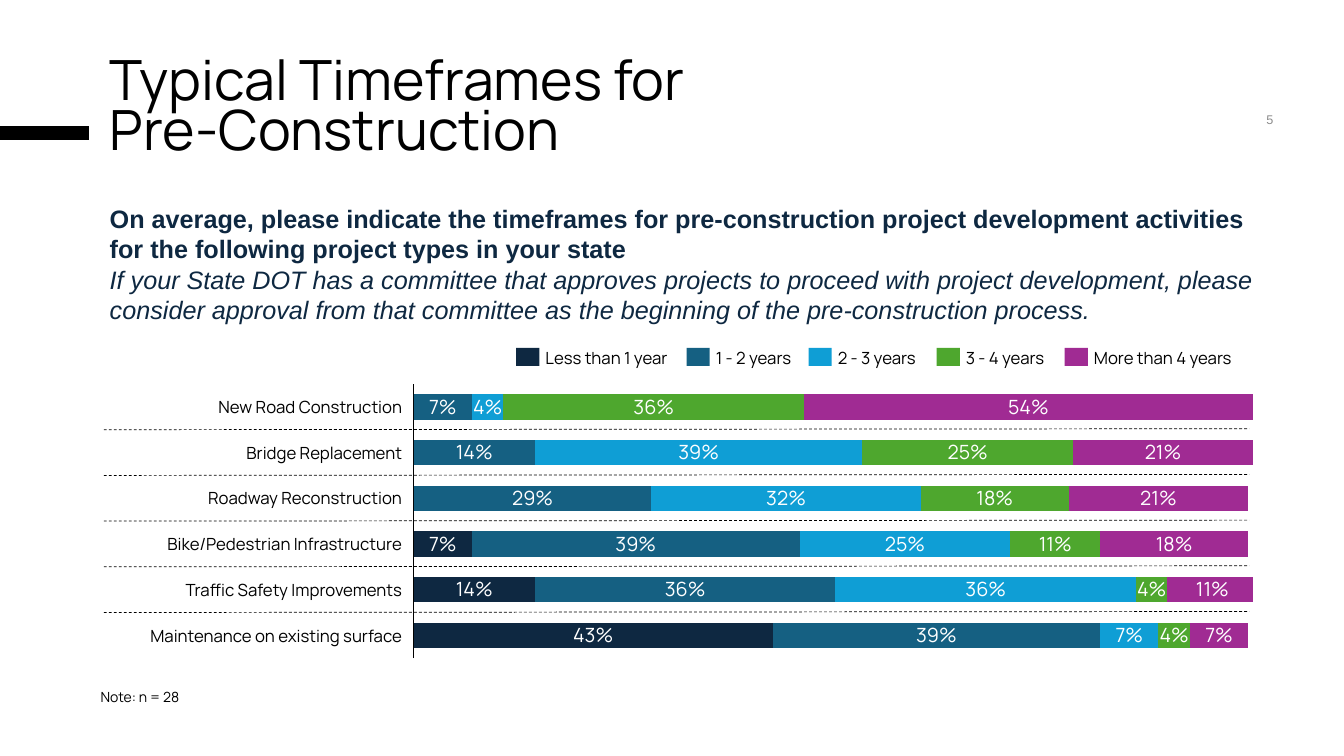
from typing import NamedTuple

from lxml.etree import SubElement
from pptx import Presentation
from pptx.chart.data import CategoryChartData
from pptx.dml.color import RGBColor
from pptx.enum.chart import XL_CHART_TYPE, XL_TICK_LABEL_POSITION, XL_TICK_MARK
from pptx.enum.dml import MSO_LINE
from pptx.enum.shapes import MSO_CONNECTOR, MSO_SHAPE
from pptx.enum.text import MSO_ANCHOR, MSO_AUTO_SIZE, PP_ALIGN
from pptx.oxml import parse_xml
from pptx.oxml.ns import nsdecls, qn
from pptx.util import Inches, Pt

BLACK, WHITE, NAVY, GREY = "000000", "FFFFFF", "0E2841", "8C8C8C"
HEADING_FONT, BODY_FONT = "Manrope", "Arial"
RESPONDENTS = 28
BAR_TOTAL = 187
CHART_LEFT, CHART_TOP, CHART_WIDTH, CHART_HEIGHT = 4.01, 3.72, 8.5, 2.9
PLOT_SHARES = {"x": 0.011, "y": 0.031, "w": 0.979, "h": 0.938}
PLOT_LEFT = CHART_LEFT + PLOT_SHARES["x"] * CHART_WIDTH
PLOT_TOP = CHART_TOP + PLOT_SHARES["y"] * CHART_HEIGHT
PLOT_WIDTH = PLOT_SHARES["w"] * CHART_WIDTH
PLOT_HEIGHT = PLOT_SHARES["h"] * CHART_HEIGHT


class Duration(NamedTuple):
    name: str
    color: str
    legend_left: float
    label_width: float


class ProjectType(NamedTuple):
    name: str
    values: tuple[int, ...]


class Box(NamedTuple):
    left: float
    top: float
    width: float
    height: float


class Style(NamedTuple):
    size: float
    font: str = HEADING_FONT
    color: str = BLACK
    bold: bool = False
    italic: bool = False


DURATIONS = [
    Duration("Less than 1 year", NAVY, 5.12, 1.29),
    Duration("1 - 2 years", "156082", 6.81, 0.81),
    Duration("2 - 3 years", "0F9ED5", 8.02, 0.86),
    Duration("3 - 4 years", "4EA72E", 9.29, 0.87),
    Duration("More than 4 years", "A02B93", 10.56, 1.5),
]
PROJECT_TYPES = [
    ProjectType("New Road Construction", (0, 13, 7, 67, 100)),
    ProjectType("Bridge Replacement", (0, 27, 73, 47, 40)),
    ProjectType("Roadway Reconstruction", (0, 53, 60, 33, 40)),
    ProjectType("Bike/Pedestrian Infrastructure", (13, 73, 47, 20, 33)),
    ProjectType("Traffic Safety Improvements", (27, 67, 67, 7, 20)),
    ProjectType("Maintenance on existing surface", (80, 73, 13, 7, 13)),
]
ROW_HEIGHT = PLOT_HEIGHT / len(PROJECT_TYPES)


def rgb(color: str) -> RGBColor:
    return RGBColor.from_string(color)


def add_run(paragraph, text: str, style: Style) -> None:
    run = paragraph.add_run()
    run.text = text
    run.font.size = Pt(style.size)
    run.font.name = style.font
    run.font.bold = style.bold
    run.font.italic = style.italic
    run.font.color.rgb = rgb(style.color)


def add_lines(paragraph, lines: list[tuple[str, Style]]) -> None:
    """Put the lines in one paragraph, with line breaks between them."""
    for index, (text, style) in enumerate(lines):
        if index:
            paragraph.add_line_break()
        add_run(paragraph, text, style)


def add_text(slide, box: Box, lines: list[tuple[str, Style]]) -> None:
    frame = slide.shapes.add_textbox(*map(Inches, box)).text_frame
    frame.word_wrap = True
    add_lines(frame.paragraphs[0], lines)


def add_label(slide, box: Box, text: str, style: Style, align=PP_ALIGN.LEFT) -> None:
    """Add a one-line label without margins, centred vertically."""
    frame = slide.shapes.add_textbox(*map(Inches, box)).text_frame
    frame.word_wrap = False
    frame.vertical_anchor = MSO_ANCHOR.MIDDLE
    frame.margin_left = frame.margin_right = frame.margin_top = frame.margin_bottom = 0
    frame.paragraphs[0].alignment = align
    add_run(frame.paragraphs[0], text, style)


def add_line(slide, start: tuple[float, float], end: tuple[float, float],
             width: float, dash=None) -> None:
    line = slide.shapes.add_connector(MSO_CONNECTOR.STRAIGHT, *map(Inches, start + end))
    line.line.color.rgb = rgb(BLACK)
    line.line.width = Pt(width)
    if dash is not None:
        line.line.dash_style = dash
    SubElement(line._element.spPr, qn("a:effectLst"))


def add_title(slide) -> None:
    title = slide.shapes.title
    title.left, title.top, title.width, title.height = map(Inches, (0.99, 0.5, 11.15, 1.19))
    frame = title.text_frame
    frame.auto_size = MSO_AUTO_SIZE.NONE
    frame.vertical_anchor = MSO_ANCHOR.MIDDLE
    paragraph = frame.paragraphs[0]
    paragraph.alignment = PP_ALIGN.LEFT
    paragraph.line_spacing = 0.75
    style = Style(39.6)
    add_lines(paragraph, [("Typical Timeframes for ", style), ("Pre-Construction", style)])


def add_timeframe_chart(slide) -> None:
    data = CategoryChartData()
    data.categories = [project.name for project in PROJECT_TYPES]
    for index, duration in enumerate(DURATIONS):
        data.add_series(duration.name, [project.values[index] for project in PROJECT_TYPES])
    area = Box(CHART_LEFT, CHART_TOP, CHART_WIDTH, CHART_HEIGHT)
    chart = slide.shapes.add_chart(XL_CHART_TYPE.BAR_STACKED, *map(Inches, area), data).chart
    chart.has_legend = chart.has_title = False
    chart.font.size, chart.font.name = Pt(10), BODY_FONT
    chart.font.color.rgb = rgb(BLACK)

    projects = chart.category_axis
    projects.reverse_order = True
    projects.tick_label_position = XL_TICK_LABEL_POSITION.NONE
    projects.major_tick_mark = projects.minor_tick_mark = XL_TICK_MARK.NONE
    projects.format.line.color.rgb = rgb(BLACK)
    projects.format.line.width = Pt(0.75)
    responses = chart.value_axis
    responses.visible = responses.has_major_gridlines = False
    responses.minimum_scale, responses.maximum_scale = 0, BAR_TOTAL

    plot = chart.plots[0]
    plot.gap_width, plot.overlap, plot.vary_by_categories = 80, 100, False
    for series, duration in zip(plot.series, DURATIONS):
        series.format.fill.solid()
        series.format.fill.fore_color.rgb = rgb(duration.color)

    sizes = "".join(f'<c:{key} val="{share}"/>' for key, share in PLOT_SHARES.items())
    layout = parse_xml(
        f'<c:layout {nsdecls("c")}><c:manualLayout><c:layoutTarget val="inner"/>'
        f'<c:xMode val="edge"/><c:yMode val="edge"/>{sizes}</c:manualLayout></c:layout>')
    plot_area = chart._chartSpace.chart.plotArea
    for automatic in plot_area.findall(qn("c:layout")):
        plot_area.remove(automatic)
    plot_area.insert(0, layout)


def add_row_labels(slide) -> None:
    for row, project in enumerate(PROJECT_TYPES):
        middle = PLOT_TOP + (row + 0.5) * ROW_HEIGHT
        add_label(slide, Box(1.27, middle - 0.1, 2.72, 0.2), project.name,
                  Style(12), PP_ALIGN.RIGHT)
        reached = 0
        for value in project.values:
            if value:
                center = PLOT_LEFT + (reached + value / 2) / BAR_TOTAL * PLOT_WIDTH
                answers = round(value / BAR_TOTAL * RESPONDENTS)
                add_label(slide, Box(center - 0.21, middle - 0.12, 0.42, 0.23),
                          f"{answers / RESPONDENTS:.0%}", Style(14, color=WHITE),
                          PP_ALIGN.CENTER)
            reached += value
        if row:
            divider = PLOT_TOP + row * ROW_HEIGHT
            add_line(slide, (1.03, divider), (12.39, divider - 0.01), 0.5, MSO_LINE.DASH)


def add_legend(slide) -> None:
    for duration in DURATIONS:
        key = slide.shapes.add_shape(
            MSO_SHAPE.RECTANGLE, *map(Inches, (duration.legend_left, 3.45, 0.23, 0.18)))
        key.shadow.inherit = False
        key.fill.solid()
        key.fill.fore_color.rgb = rgb(duration.color)
        key.line.fill.background()
        add_label(slide, Box(duration.legend_left + 0.29, 3.45, duration.label_width, 0.2),
                  duration.name, Style(12))


def main() -> None:
    deck = Presentation()
    deck.slide_width, deck.slide_height = Inches(13.33), Inches(7.5)
    slide = deck.slides.add_slide(deck.slide_layouts[5])
    add_line(slide, (0, 1.32), (0.88, 1.32), 9.5)
    add_title(slide)
    add_label(slide, Box(9.56, 0.99, 3.07, 0.38), "5", Style(9, BODY_FONT, GREY), PP_ALIGN.RIGHT)
    add_timeframe_chart(slide)
    add_row_labels(slide)
    add_text(slide, Box(0.99, 1.97, 11.64, 1.31), [
        ("On average, please indicate the timeframes for pre-construction project development "
         "activities for the following project types in your state",
         Style(18, BODY_FONT, NAVY, bold=True)),
        ("If your State DOT has a committee that approves projects to proceed with project "
         "development, please consider approval from that committee as the beginning of the "
         "pre-construction process.", Style(18, BODY_FONT, NAVY, italic=True)),
    ])
    add_text(slide, Box(0.9, 6.78, 9.1, 0.27), [("Note: n = 28", Style(10))])
    add_legend(slide)
    deck.save("out.pptx")


if __name__ == "__main__":
    main()
